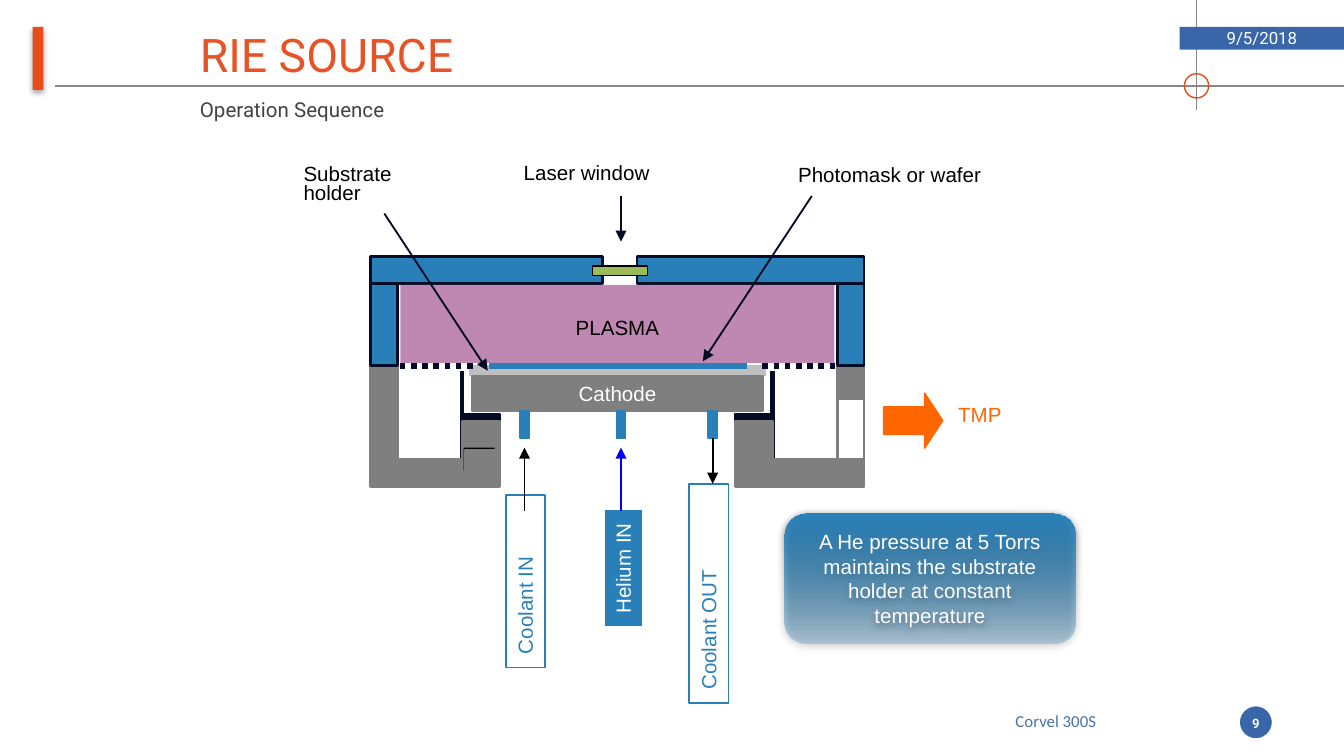
from lxml.etree import SubElement
from pptx import Presentation
from pptx.dml.color import RGBColor
from pptx.enum.dml import MSO_LINE
from pptx.enum.shapes import MSO_CONNECTOR, MSO_SHAPE
from pptx.enum.text import MSO_ANCHOR, PP_ALIGN
from pptx.oxml.ns import qn
from pptx.util import Pt

BLUE, NAVY, GRAY, BRAND = "2980B9", "040B25", "7F7F7F", "3866A8"
WHITE, BLACK, RED, ORANGE, RULE = "FFFFFF", "000000", "E74D18", "FF6600", "888886"
MID = {"vertical_anchor": MSO_ANCHOR.MIDDLE}
CENTER = {"alignment": PP_ALIGN.CENTER}
TIGHT = {"line_spacing": 0.8}


def color(text):
    return RGBColor.from_string(text)


def write(shape, text, tint=BLACK, size=11, font="Arial", bold=False, frame=(), para=()):
    body = shape.text_frame
    for key, value in {"word_wrap": True, "vertical_anchor": MSO_ANCHOR.TOP, **dict(frame)}.items():
        setattr(body, key, value)
    body.text = text
    for item in body.paragraphs:
        for key, value in {"alignment": PP_ALIGN.LEFT, **dict(para)}.items():
            setattr(item, key, value)
        for run in item.runs:
            for key, value in {"name": font, "size": Pt(size), "bold": bold}.items():
                setattr(run.font, key, value)
            run.font.color.rgb = color(tint)


def label(slide, x, y, w, h, text, **form):
    write(slide.shapes.add_textbox(Pt(x), Pt(y), Pt(w), Pt(h)), text, **form)


def block(slide, x, y, w, h, fill=None, edge=None, width=0.75, kind=MSO_SHAPE.RECTANGLE):
    shape = slide.shapes.add_shape(kind, Pt(x), Pt(y), Pt(w), Pt(h))
    shape.shadow.inherit = False
    if fill:
        shape.fill.solid()
        shape.fill.fore_color.rgb = color(fill)
    else:
        shape.fill.background()
    if edge:
        shape.line.color.rgb = color(edge)
        shape.line.width = Pt(width)
    else:
        shape.line.fill.background()
    return shape


def stroke(slide, x1, y1, x2, y2, tint, width=1, arrow=False, dash=None):
    line = slide.shapes.add_connector(MSO_CONNECTOR.STRAIGHT, Pt(x1), Pt(y1), Pt(x2), Pt(y2))
    line.line.color.rgb = color(tint)
    line.line.width = Pt(width)
    if dash:
        line.line.dash_style = dash
    props = line._element.spPr
    if arrow:
        SubElement(props.find(qn("a:ln")), qn("a:tailEnd"), type="triangle")
    SubElement(props, qn("a:effectLst"))


def shade(shape, alpha, blur, dist):
    """Drop a black shadow straight down."""
    effects = shape._element.spPr.find(qn("a:effectLst"))
    outer = SubElement(effects, qn("a:outerShdw"), blurRad=str(int(Pt(blur))),
                       dist=str(int(Pt(dist))), dir="5400000", rotWithShape="0")
    tint = SubElement(outer, qn("a:srgbClr"), val=BLACK)
    SubElement(tint, qn("a:alpha"), val=str(alpha * 1000))


def header(slide, x, y, w):
    cross, rule = x + w - 79, y + 46
    stroke(slide, x + 29.5, rule, x + w, rule, RULE, 0.75)
    stroke(slide, cross, y + 59, cross, y, RULE, 0.75)
    block(slide, cross - 6.5, rule - 6.5, 13, 13, edge=RED, kind=MSO_SHAPE.OVAL)
    shade(block(slide, x + 17.5, y + 14.4, 5.8, 33.8, RED), 35, 3.1, 1.8)
    label(slide, x + 100, y + 10, 532, 37.5, "RIE SOURCE", tint="E75326", size=24.8,
          font="Roboto", frame=MID)
    date = block(slide, x + w - 88, y + 14.4, 88, 12.2, BRAND)
    write(date, "9/5/2018", WHITE, 9, "Roboto", frame=MID, para=CENTER)
    label(slide, x + 100, y + 48.2, 199, 20, "Operation Sequence", tint="434342", font="Roboto")


def footer(slide, x, y):
    block(slide, x + 172.8, y, 19.4, 19.4, BRAND, WHITE, 2.25, MSO_SHAPE.OVAL)
    name = block(slide, x, y, 150.5, 18, WHITE)
    write(name, "Corvel 300S", "4972AB", 9, "Calibri", frame=MID, para=CENTER)
    label(slide, x + 170.6, y, 23.8, 20, "9", tint=WHITE, size=7, font="Roboto", bold=True,
          frame=MID, para=CENTER)


def chamber(slide, x, y, w):
    def pair(left, top, wide, high, *form):
        for start in (left, w - left - wide):
            block(slide, x + start, y + top, wide, high, *form)

    def rails(x1, y1, x2, y2, *form, **more):
        for a, b in ((x1, x2), (w - x1, w - x2)):
            stroke(slide, x + a, y + y1, x + b, y + y2, *form, **more)

    stroke(slide, x + 52.5, y + 61.2, x + 211.5, y + 61.2, "BFBFBF", 6)
    stroke(slide, x + 63.4, y + 58.3, x + 201.6, y + 58.3, BLUE, 3.25)
    pair(49, 84.2, 20, 3.6, NAVY, NAVY, 1)
    pair(0, 58, 14.4, 65, GRAY, GRAY, 1.5)
    rails(49, 61.5, 49, 108.7, NAVY, 2.25)
    block(slide, x + w - 14.4, y + 76.3, 14.4, 32.4, WHITE, GRAY, 1.5)
    pair(49, 88, 20, 35, GRAY, GRAY, 1.5)
    pair(0, 108.7, 69, 14.4, GRAY, GRAY, 1.5)
    block(slide, x + 49.7, y + 102.3, 16.6, 12.2, BLACK)
    block(slide, x + 50.4, y + 103.7, 18, 12.2, GRAY, GRAY, 1.5)
    pair(0, 14.4, 14.4, 43.8, BLUE, NAVY, 1.5)
    block(slide, x, y, 124, 14.4, BLUE, NAVY, 1.5)
    block(slide, x + w - 121.7, y, 121.7, 14.4, BLUE, NAVY, 1.5)
    block(slide, x + 118.8, y + 5, 29.5, 5, "9BBB59", BLACK)
    rails(54.5, 58.7, 14.4, 58.7, NAVY, 3, dash=MSO_LINE.ROUND_DOT)
    plasma = block(slide, x + 15.8, y + 15.1, 232.6, 41.8, "BF88B3")
    write(plasma, "PLASMA", frame={"margin_top": Pt(16.3)}, para=CENTER)
    cathode = block(slide, x + 54, y + 64.1, 156.2, 18.7, GRAY, GRAY, 1)
    write(cathode, "Cathode", WHITE, frame={**MID, "word_wrap": False}, para=CENTER)


def feed(slide, x, y, text, size, flow, tag, fill=None, edge=BLUE, tint=BLUE, arrow=BLACK):
    """Draw a pipe centred on x, its upright tag and its flow arrow."""
    block(slide, x - 2.5, y, 5, 14.4, BLUE, BLUE)
    shift, drop = tag
    box = block(slide, x + shift - size / 2, y + drop - 10.5, size, 21, fill, edge, 1)
    box.rotation = 270
    write(box, text, tint, frame={"word_wrap": fill is None})
    stroke(slide, x, y + flow[0], x, y + flow[1], arrow, arrow=True)


def feeds(slide, x, y):
    up = (53.3, 19.5)
    feed(slide, x, y, "Coolant IN", 92.2, up, (0.4, 91.2))
    feed(slide, x + 100.8, y, "Coolant OUT", 117.4, (14.4, 38.9), (-2, 97.6))
    feed(slide, x + 51.7, y, "Helium IN", 63.4, up, (1.2, 83.9), BLUE, WHITE, WHITE, "0000FF")


def exhaust(slide, x, y):
    arrow = block(slide, x, y, 29.5, 31.7, ORANGE, ORANGE, kind=MSO_SHAPE.DOWN_ARROW)
    arrow.adjustments[1] = 0.33
    arrow.rotation = 270
    label(slide, x + 31.7, y + 2.2, 56, 20.9, "TMP", tint=ORANGE)


def note(slide, x, y, w, h):
    box = block(slide, x, y, w, h, BLUE, kind=MSO_SHAPE.ROUNDED_RECTANGLE)
    box.fill.gradient()
    box.fill.gradient_angle = 270
    for stop, place in zip(box.fill.gradient_stops, (0, 1)):
        stop.position = place
        stop.color.rgb = color(BLUE)
    last = box._element.spPr.findall(".//" + qn("a:gs"))[-1]
    SubElement(last[0], qn("a:alpha"), val="25000")
    shade(box, 63, 4.5, 1.5)
    write(box, "A He pressure at 5 Torrs maintains the substrate holder at constant temperature",
          WHITE, frame=MID, para=CENTER)


def callouts(slide, x, y):
    label(slide, x, y + 3, 80.6, 28.8, "Substrate\nholder", para=TIGHT)
    label(slide, x + 118, y, 112.3, 20.9, "Laser window")
    label(slide, x + 265, y + 3.6, 117.4, 18, "Photomask or wafer", para=TIGHT)
    for start, end in (((50.4, 32.4), (105.8, 116.6)),
                       ((177.2, 23), (177.2, 47.5)),
                       ((279.4, 23), (221, 111.6))):
        stroke(slide, x + start[0], y + start[1], x + end[0], y + end[1], NAVY, arrow=True)


def main():
    deck = Presentation()
    deck.slide_width, deck.slide_height = Pt(720), Pt(405)
    slide = deck.slides.add_slide(deck.slide_layouts[6])
    header(slide, 0, 0, 720)
    footer(slide, 490.3, 377.3)
    exhaust(slide, 474.5, 209.5)
    chamber(slide, 198.7, 137.5, 264.2)
    feeds(slide, 281, 220.3)
    note(slide, 420.5, 275, 155.5, 69.8)
    callouts(slide, 155.5, 82)
    deck.save("out.pptx")


if __name__ == "__main__":
    main()
